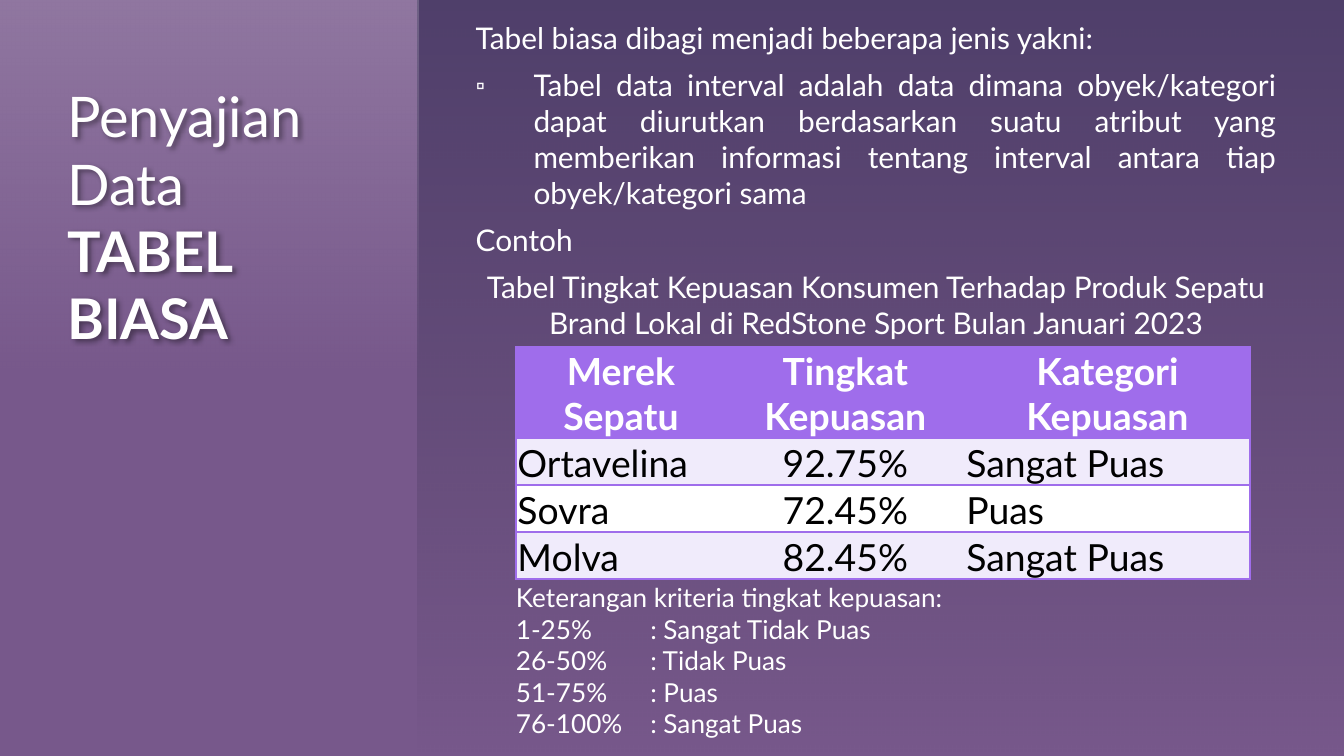
from lxml.etree import SubElement
from pptx import Presentation
from pptx.dml.color import RGBColor
from pptx.enum.shapes import MSO_SHAPE
from pptx.enum.text import MSO_ANCHOR, MSO_AUTO_SIZE, PP_ALIGN
from pptx.oxml import parse_xml
from pptx.oxml.ns import nsdecls, qn
from pptx.util import Inches, Pt

WHITE = RGBColor(0xFF, 0xFF, 0xFF)
BLACK = RGBColor(0x00, 0x00, 0x00)
PLUM = RGBColor(0x77, 0x58, 0x8B)
NAVY = RGBColor(0x02, 0x0F, 0x2B)
DARK_NAVY = RGBColor(0x01, 0x0C, 0x16)
VIOLET = RGBColor(0x9F, 0x6D, 0xEB)
LAVENDER = RGBColor(0xF0, 0xEB, 0xFB)
NO_STYLE = "{2D5ABB26-0587-4C30-8999-92F81FD0307C}"


def write(paragraph, text, size=16, color=WHITE, bold=False, align=PP_ALIGN.LEFT):
    paragraph.alignment = align
    run = paragraph.add_run()
    run.text = text
    run.font.name = "Lato"
    run.font.size = Pt(size)
    run.font.bold = bold
    run.font.color.rgb = color


def set_margins(frame, margin):
    frame.margin_left = frame.margin_right = Inches(margin)
    frame.margin_top = frame.margin_bottom = Inches(margin)


presentation = Presentation()
presentation.slide_width = Inches(10)
presentation.slide_height = Inches(10) * 9 // 16
slide = presentation.slides.add_slide(presentation.slide_layouts[5])
slide.background.fill.solid()
slide.background.fill.fore_color.rgb = PLUM

panels = [
    (3.11, 6.9, 5.64, NAVY, DARK_NAVY, 34),
    (-0.01, 3.12, 2.83, WHITE, WHITE, 19),
]
for left, width, height, top_color, bottom_color, opacity in panels:
    panel = slide.shapes.add_shape(
        MSO_SHAPE.RECTANGLE, Inches(left), Inches(-0.01), Inches(width), Inches(height))
    panel.shadow.inherit = False
    panel.line.fill.background()
    panel.fill.gradient()
    panel.fill.gradient_angle = 270
    stops = panel.fill.gradient_stops
    for stop, position, color in zip(stops, (0, 1), (top_color, bottom_color)):
        stop.position = position
        stop.color.rgb = color
    for tint, alpha in zip(panel._element.spPr.iter(qn("a:srgbClr")), (opacity, 0)):
        SubElement(tint, qn("a:alpha")).set("val", str(alpha * 1000))

title = slide.shapes.title
slide.shapes._spTree.append(title._element)
title.left, title.top = Inches(0.5), Inches(0.61)
title.width, title.height = Inches(2.11), Inches(4.44)
title.text_frame.word_wrap = True
title.text_frame.auto_size = MSO_AUTO_SIZE.NONE
title.text_frame.vertical_anchor = MSO_ANCHOR.TOP
set_margins(title.text_frame, 0)
heading = title.text_frame.paragraphs[0]
write(heading, "Penyajian Data", size=30)
heading.add_line_break()
write(heading, "TABEL BIASA", size=30, bold=True)
title._element.spPr.append(parse_xml(
    f'<a:effectLst {nsdecls("a")}><a:outerShdw blurRad="38100" dist="25400" dir="2700000">'
    '<a:srgbClr val="000000"><a:alpha val="40000"/></a:srgbClr>'
    '</a:outerShdw></a:effectLst>'))

explanation = slide.shapes.add_textbox(
    Inches(3.47), Inches(0.15), Inches(6.03), Inches(1.53)).text_frame
explanation.word_wrap = True
set_margins(explanation, 0)
statements = [
    ("Tabel biasa dibagi menjadi beberapa jenis yakni:", PP_ALIGN.JUSTIFY, False),
    ("Tabel data interval adalah data dimana obyek/kategori dapat diurutkan berdasarkan "
     "suatu atribut yang memberikan informasi tentang interval antara tiap "
     "obyek/kategori sama", PP_ALIGN.JUSTIFY, True),
    ("Contoh", PP_ALIGN.JUSTIFY, False),
    ("Tabel Tingkat Kepuasan Konsumen Terhadap Produk Sepatu Brand Lokal di "
     "RedStone Sport Bulan Januari 2023", PP_ALIGN.CENTER, False),
]
for index, (statement, align, bulleted) in enumerate(statements):
    paragraph = explanation.add_paragraph() if index else explanation.paragraphs[0]
    properties = paragraph._p.get_or_add_pPr()
    properties.set("marL", str(Inches(0.5 if bulleted else 0.07)))
    properties.set("indent", str(Inches(-0.43 if bulleted else 0)))
    if bulleted:
        bullet_color = SubElement(properties, qn("a:buClr"))
        SubElement(bullet_color, qn("a:srgbClr")).set("val", str(WHITE))
        SubElement(properties, qn("a:buSzPct")).set("val", "80000")
        SubElement(properties, qn("a:buFont")).set("typeface", "Lato")
        SubElement(properties, qn("a:buChar")).set("char", "▫")
    if index:
        paragraph.space_before = Pt(6)
    write(paragraph, statement, align=align)

ratings = [
    ("Merek Sepatu", "Tingkat Kepuasan", "Kategori Kepuasan"),
    ("Ortavelina", "92.75%", "Sangat Puas"),
    ("Sovra", "72.45%", "Puas"),
    ("Molva", "82.45%", "Sangat Puas"),
]
rating_table = slide.shapes.add_table(
    len(ratings), 3, Inches(3.84), Inches(2.58), Inches(5.46), Inches(1.73)).table
rating_table._tbl.tblPr.find(qn("a:tableStyleId")).text = NO_STYLE
for column, width in zip(rating_table.columns, (1.56, 1.78, 2.12)):
    column.width = Inches(width)
for row_index, values in enumerate(ratings):
    is_header = row_index == 0
    rating_table.rows[row_index].height = Inches(0.68 if is_header else 0.35)
    for column_index, value in enumerate(values):
        cell = rating_table.cell(row_index, column_index)
        set_margins(cell, 0.01)
        cell.margin_bottom = 0
        cell.vertical_anchor = MSO_ANCHOR.BOTTOM
        edges = ["a:lnT", "a:lnB"]
        if column_index == 2:
            edges.insert(0, "a:lnR")
        if column_index == 0:
            edges.insert(0, "a:lnL")
        for edge in edges:
            border = SubElement(cell._tc.get_or_add_tcPr(), qn(edge), w=str(Pt(1)))
            border_fill = SubElement(border, qn("a:solidFill"))
            SubElement(border_fill, qn("a:srgbClr")).set("val", str(VIOLET))
        cell.fill.solid()
        cell.fill.fore_color.rgb = VIOLET if is_header else (WHITE, LAVENDER)[row_index % 2]
        centered = is_header or column_index == 1
        write(cell.text_frame.paragraphs[0], value, size=20, bold=is_header,
              color=WHITE if is_header else BLACK,
              align=PP_ALIGN.CENTER if centered else PP_ALIGN.LEFT)

legend = slide.shapes.add_textbox(
    Inches(3.74), Inches(4.28), Inches(3.83), Inches(1.28)).text_frame
legend.word_wrap = False
legend.auto_size = MSO_AUTO_SIZE.SHAPE_TO_FIT_TEXT
criteria = [
    "Keterangan kriteria tingkat kepuasan:",
    "1-25%\t: Sangat Tidak Puas",
    "26-50%\t: Tidak Puas",
    "51-75%\t: Puas",
    "76-100%\t: Sangat Puas",
]
for index, criterion in enumerate(criteria):
    paragraph = legend.add_paragraph() if index else legend.paragraphs[0]
    write(paragraph, criterion, size=14)

presentation.save("out.pptx")
